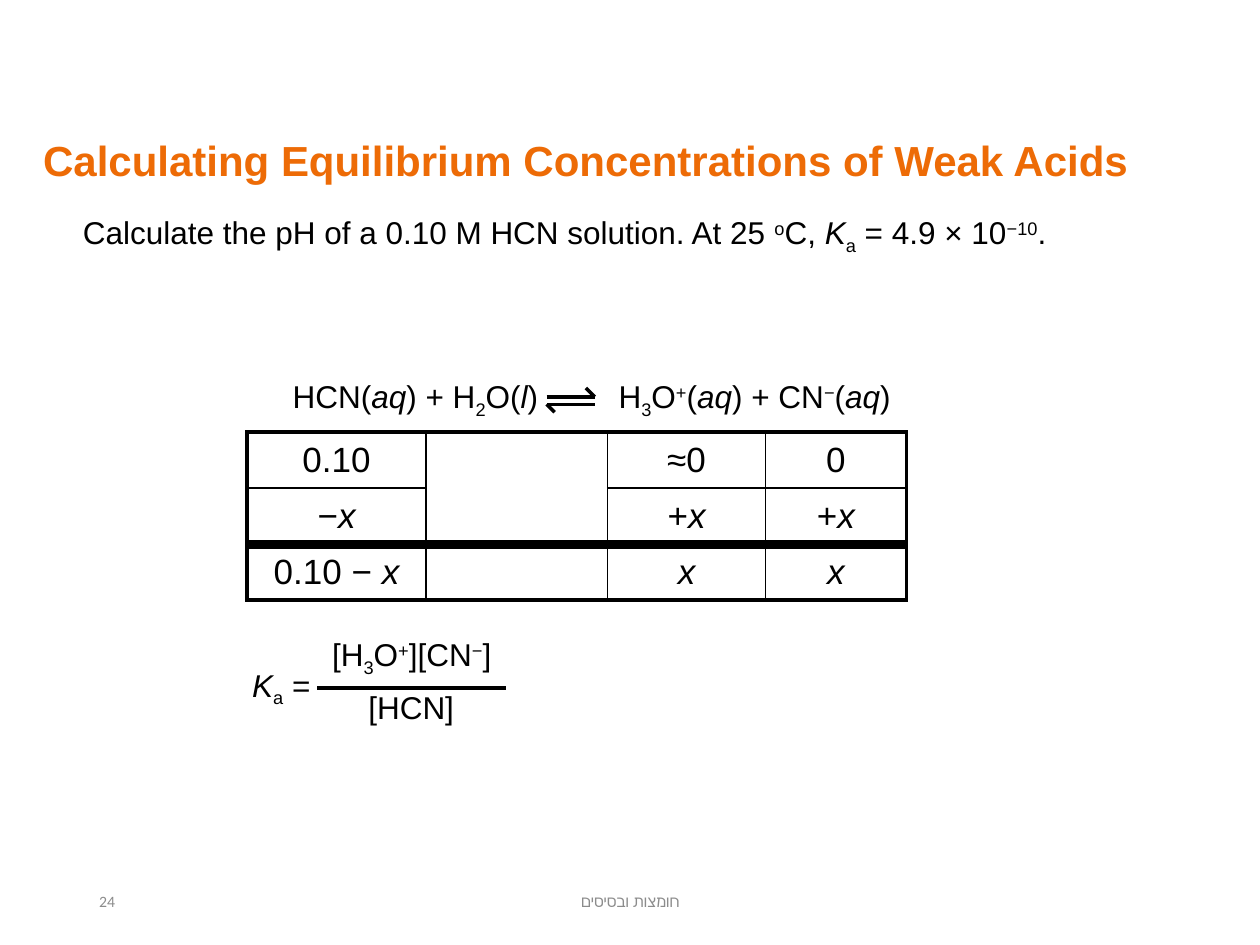
from lxml import etree
from pptx import Presentation
from pptx.dml.color import RGBColor
from pptx.enum.shapes import MSO_CONNECTOR
from pptx.enum.text import MSO_ANCHOR, MSO_AUTO_SIZE, PP_ALIGN
from pptx.oxml.ns import qn
from pptx.util import Cm, Pt

LEFT, CENTER, RIGHT = PP_ALIGN.LEFT, PP_ALIGN.CENTER, PP_ALIGN.RIGHT
TOP, MIDDLE = MSO_ANCHOR.TOP, MSO_ANCHOR.MIDDLE
GROW, FIXED = MSO_AUTO_SIZE.SHAPE_TO_FIT_TEXT, MSO_AUTO_SIZE.NONE
STRAIGHT = MSO_CONNECTOR.STRAIGHT

COLORS = {"title": "ED6B06", "body": "000000", "footer": "8C8C8C"}
BASELINES = {"~": "-25000", "^": "30000"}
TOGGLES = "*~^"


def split_marks(text):
    active, piece = set(), ""
    for char in text:
        if char in TOGGLES:
            if piece:
                yield piece, frozenset(active)
            active ^= {char}
            piece = ""
        else:
            piece += char
    if piece:
        yield piece, frozenset(active)


def write(frame, text, size=18, font="Arial", color="body", bold=False,
          align=LEFT, rtl=False):
    """Asterisks enclose italics, tildes subscripts, carets superscripts."""
    para = frame.paragraphs[0]
    para.alignment = align
    if rtl:
        para._p.get_or_add_pPr().set("rtl", "1")
    for piece, marks in split_marks(text):
        span = para.add_run()
        span.text = piece
        span.font.size = Pt(size)
        span.font.name = font
        span.font.bold = bold
        span.font.italic = "*" in marks
        span.font.color.rgb = RGBColor.from_string(COLORS[color])
        for mark in marks & BASELINES.keys():
            span._r.get_or_add_rPr().set("baseline", BASELINES[mark])


class SlideBuilder:
    def __init__(self, deck):
        self.page = deck.slides.add_slide(deck.slide_layouts[6])
        self.shapes = self.page.shapes
        self.line_color = COLORS["body"]

    def start_group(self):
        self.shapes = self.page.shapes.add_group_shape().shapes

    def end_group(self):
        self.shapes = self.page.shapes

    def text(self, left, top, width, text, height=1.02, anchor=TOP, wrap=True,
             fit=GROW, insets=(0.25, 0.13, 0.25, 0.13), **style):
        box = self.shapes.add_textbox(Cm(left), Cm(top), Cm(width), Cm(height))
        frame = box.text_frame
        frame.word_wrap = wrap
        frame.auto_size = fit
        frame.vertical_anchor = anchor
        self.set_margins(frame, insets)
        write(frame, text, **style)

    def set_margins(self, target, insets):
        (target.margin_left, target.margin_top,
         target.margin_right, target.margin_bottom) = map(Cm, insets)

    def line(self, x1, y1, x2, y2, weight=2):
        line = self.shapes.add_connector(STRAIGHT, Cm(x1), Cm(y1), Cm(x2), Cm(y2))
        line.line.color.rgb = RGBColor.from_string(self.line_color)
        line.line.width = Pt(weight)
        etree.SubElement(line._element.spPr, qn("a:effectLst"))

    def border(self, cell, side, weight):
        edge = etree.SubElement(cell._tc.get_or_add_tcPr(), qn(f"a:ln{side}"),
                                w=str(Pt(weight)))
        fill = etree.SubElement(edge, qn("a:solidFill"))
        etree.SubElement(fill, qn("a:srgbClr"), val=self.line_color)

    def table(self, left, top, widths, row_height, rows, merged_column):
        frame = self.shapes.add_table(
            len(rows), len(widths), Cm(left), Cm(top),
            Cm(sum(widths)), Cm(row_height * len(rows)))
        table = frame.table
        table.first_row = table.horz_banding = False
        for column, width in zip(table.columns, widths):
            column.width = Cm(width)
        last_row, last_column = len(rows) - 1, len(widths) - 1
        for r, row in enumerate(rows):
            table.rows[r].height = Cm(row_height)
            for c, text in enumerate(row):
                cell = table.cell(r, c)
                cell.vertical_anchor = MIDDLE
                self.set_margins(cell, (0.18, 0.1, 0.18, 0.1))
                merged = c == merged_column
                outer = {"L": c == 0, "R": c == last_column,
                         "T": r == 0 or merged, "B": r == last_row or merged}
                for side, is_outer in outer.items():
                    self.border(cell, side, 2.25 if is_outer else 1)
                cell.fill.background()
                write(cell.text_frame, text, size=20, align=CENTER)
        table.cell(0, merged_column).merge(table.cell(last_row, merged_column))


def main():
    deck = Presentation()
    deck.slide_width, deck.slide_height = Cm(25.4), Cm(19.05)
    slide = SlideBuilder(deck)

    footer = dict(size=9, font="Calibri", color="footer", anchor=MIDDLE, fit=FIXED)
    slide.text(8.41, 17.65, 8.59, "חומצות ובסיסים", align=CENTER, rtl=True, **footer)
    slide.text(1.75, 17.65, 5.72, "24", **footer)

    slide.text(-0.1, 2.62, 24.03, "Calculating Equilibrium Concentrations of Weak Acids",
               height=1.22, insets=(0.97, 0.1, 0.18, 0.1),
               size=24, color="title", bold=True)
    slide.text(1.42, 4.17, 21.59, "Calculate the pH of a 0.10 M HCN solution. "
               "At 25 ^o^C, *K*~a~ = 4.9 × 10^−10^.")

    slide.start_group()
    for arrow_line in ((11.02, 8, 11.99, 8), (11.99, 8, 11.81, 7.82),
                       (11.99, 8.15, 11.02, 8.15), (11.02, 8.15, 11.18, 8.31)):
        slide.line(*arrow_line)
    slide.text(12.22, 7.47, 6.12, "H~3~O^+^(*aq*) + CN^−^(*aq*)", wrap=False)
    slide.text(5.56, 7.47, 5.54, "HCN(*aq*) + H~2~O(*l*)", wrap=False, align=RIGHT)
    slide.end_group()

    table_left, table_top, row_height = 4.98, 8.71, 1.13
    widths = (3.61, 3.66, 3.18, 2.84)
    rows = (("0.10", "", "≈0", "0"),
            ("−*x*", "", "+*x*", "+*x*"),
            ("0.10 − *x*", "", "*x*", "*x*"))
    slide.table(table_left, table_top, widths, row_height, rows, merged_column=1)
    divider = table_top + 2 * row_height
    slide.line(table_left, divider, table_left + sum(widths), divider, weight=5)

    slide.start_group()
    formula = dict(anchor=MIDDLE, wrap=False)
    slide.text(6.38, 12.73, 3.84, "[H~3~O^+^][CN^−^]", align=CENTER, **formula)
    slide.text(7.16, 13.74, 2.26, "[HCN]", align=CENTER, **formula)
    slide.line(6.4, 13.87, 10.21, 13.87)
    slide.text(4.78, 13.34, 1.73, "*K*~a~ =", align=RIGHT, **formula)
    slide.end_group()

    deck.save("out.pptx")


if __name__ == "__main__":
    main()
